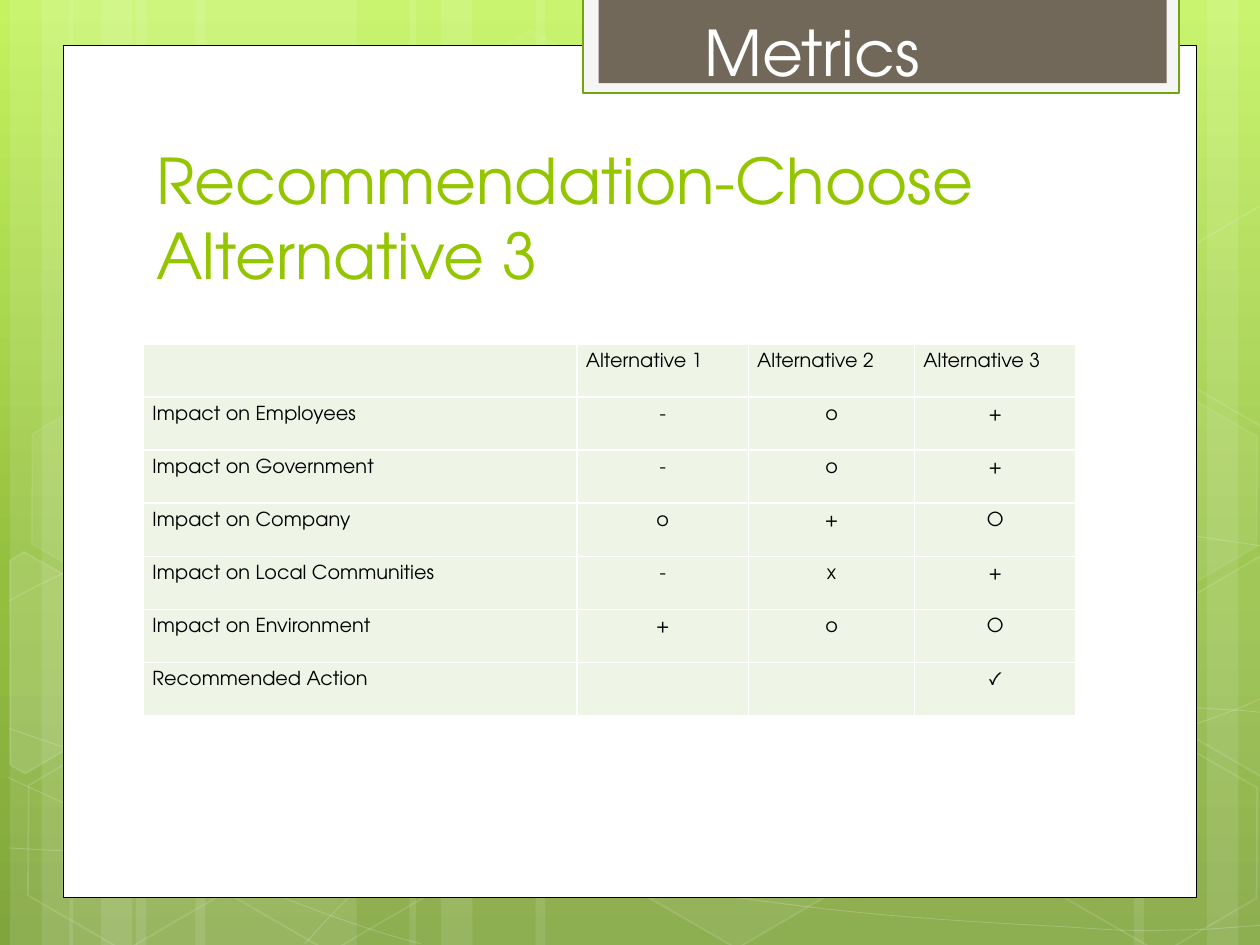
from dataclasses import dataclass

from lxml.etree import SubElement
from pptx import Presentation
from pptx.dml.color import RGBColor
from pptx.enum.shapes import MSO_SHAPE as SHAPE
from pptx.enum.text import MSO_ANCHOR as ANCHOR, MSO_AUTO_SIZE as AUTO_SIZE, PP_ALIGN as ALIGN
from pptx.oxml.ns import qn
from pptx.util import Inches, Pt


@dataclass(frozen=True)
class Theme:
    """Colours, font and type sizes of the slide."""
    font: str = "TeX Gyre Adventor"
    white: str = "FFFFFF"
    black: str = "000000"
    green: str = "94C600"
    tab_edge: str = "74A510"
    tab_frame: str = "F5F5F5"
    tab: str = "71685A"
    cell: str = "EEF5E7"
    sky: tuple = ((0, "C3F35F"), (62, "93BF3F"), (100, "81A53E"))
    title: int = 36
    body: int = 11


T = Theme()

BARS = [(1.08, 1.75), (0.08, 0.5), (0.33, 0.83), (1.55, 1.75), (0.55, 0.5), (0.8, 0.83),
        (7.33, 1.75), (9.58, 0.5), (9, 0.83), (4.25, 3.08), (3.25, 0.5), (3.5, 0.83)]

CURVES = [
    [(0.07, 6.73), (0.61, 6.76), (1.15, 6.79), (1.9, 6.78), (2.65, 6.77), (3.58, 6.75), (4.58, 6.65),
     (5.58, 6.55), (7, 6.36), (7.92, 6.17), (8.83, 5.98), (9.77, 5.68), (10.07, 5.51)],
    [(0.07, 4.77), (0.36, 4.61), (0.65, 4.46), (1.21, 4.31), (1.78, 4.16), (2.59, 3.94), (3.47, 3.87),
     (4.36, 3.8), (5.44, 3.79), (6.54, 3.87), (7.64, 3.95), (9.47, 4.26), (10.07, 4.34)],
    [(0.06, 6.17), (1.27, 6.72), (2.47, 7.27), (3.34, 7.49)],
    [(0.07, 5.78), (0.38, 5.89), (0.7, 6), (1.28, 6.16), (1.86, 6.31), (2.73, 6.56), (3.57, 6.73),
     (4.4, 6.9), (5.45, 7.08), (6.28, 7.18), (7.11, 7.29), (8, 7.33), (8.53, 7.36),
     (9.05, 7.4), (9.19, 7.38), (9.45, 7.38), (9.71, 7.37), (9.89, 7.35), (10.07, 7.34)],
    [(2.42, 7.49), (2.6, 7.29), (2.78, 7.09), (3.02, 6.91), (3.26, 6.73), (3.6, 6.53), (3.88, 6.39),
     (4.16, 6.25), (4.33, 6.19), (4.7, 6.09), (5.06, 5.99), (5.73, 5.85), (6.08, 5.78),
     (6.44, 5.71), (6.49, 5.71), (6.8, 5.69), (7.11, 5.66), (7.6, 5.63), (7.94, 5.62),
     (8.29, 5.61), (8.86, 5.62), (8.86, 5.62), (9.08, 5.62), (9.31, 5.62), (9.53, 5.62),
     (9.71, 5.63), (9.88, 5.64), (9.97, 5.65), (10.06, 5.66), (10.03, 5.65), (10.06, 5.66)],
]

HEXAGONS = [(3.34, 0.36, 4, 8), (4.97, 5.89, 6, 12), (0.11, 5.91, None, 12), (0.14, 3.12, 7, 8),
            (1.74, 5.92, None, 12), (7.53, 4.53, 10, 12), (8.34, 5.93, None, 12), (8.34, 3.14, 7, 8)]

CUT_HEXAGONS = [
    ([(0.08, 4.45), (0.19, 4.38), (0.96, 4.82), (0.95, 5.7), (0.2, 6.14), (0.08, 6.07)], 10),
    ([(9.26, 4.85), (10.01, 4.41), (10.09, 4.46), (10.09, 6.13), (10.02, 6.17), (9.26, 5.73)], 4),
    ([(9.26, 2.07), (10.01, 1.63), (10.1, 1.68), (10.09, 3.35), (10.02, 3.39), (9.26, 2.95)], None),
]

COLUMNS = [3.44, 1.36, 1.32, 1.28]
ROWS = [
    ["", "Alternative 1", "Alternative 2", "Alternative 3"],
    ["Impact on Employees", "-", "o", "+"],
    ["Impact on Government", "-", "o", "+"],
    ["Impact on Company", "o", "+", "O"],
    ["Impact on Local Communities", "-", "x", "+"],
    ["Impact on Environment", "+", "o", "O"],
    ["Recommended Action", "", "", "✓"],
]


def paint(fill, color, alpha=100):
    """Fill solidly, with opacity in percent."""
    fill.solid()
    fill.fore_color.rgb = RGBColor.from_string(color)
    if alpha < 100:
        clr = fill._xPr.find(".//" + qn("a:srgbClr"))
        SubElement(clr, qn("a:alpha"), val=str(alpha * 1000))


def style(sp, fill=None, alpha=100, line=None, width=1, line_alpha=100):
    """Set a shape's fill and outline and drop its shadow."""
    sp.shadow.inherit = False
    if fill and alpha:
        paint(sp.fill, fill, alpha)
    else:
        sp.fill.background()
    if line:
        sp.line.width = Pt(width)
        paint(sp.line.fill, line, line_alpha)
    else:
        sp.line.fill.background()


def add_box(s, x, y, w, h, kind=SHAPE.RECTANGLE, **look):
    """Add a styled preset shape."""
    sp = s.shapes.add_shape(kind, Inches(x), Inches(y), Inches(w), Inches(h))
    style(sp, **look)
    return sp


def add_outline(s, points, close, **look):
    """Add a styled freeform through points in inches."""
    start, *rest = [(Inches(x), Inches(y)) for x, y in points]
    fb = s.shapes.build_freeform(*start)
    fb.add_line_segments(rest, close=close)
    sp = fb.convert_to_shape()
    style(sp, **look)
    return sp


def add_curve(s, points):
    """Add a faint line of cubic Bezier segments."""
    sp = add_outline(s, points, False, line=T.white, width=0.5, line_alpha=20)
    outline = sp._element.find(".//" + qn("a:path"))
    for i, segment in enumerate(outline.findall(qn("a:lnTo"))):
        if i % 3 == 0:
            cubic = SubElement(outline, qn("a:cubicBezTo"))
        cubic.append(segment[0])
        outline.remove(segment)


def add_run(p, text, size, color):
    """Add a run in the theme font."""
    r = p.add_run()
    r.text = text
    r.font.name = T.font
    r.font.size = Pt(size)
    r.font.color.rgb = RGBColor.from_string(color)


def set_background(s):
    """Give the slide its vertical gradient."""
    fill = s.background.fill
    fill.gradient()
    fill.gradient_angle = 270
    stops = s._element.find(".//" + qn("a:gsLst"))
    for gs in list(stops):
        stops.remove(gs)
    for pos, color in T.sky:
        gs = SubElement(stops, qn("a:gs"), pos=str(pos * 1000))
        SubElement(gs, qn("a:srgbClr"), val=color)


def add_backdrop(s):
    """Add the bars, curves and hexagons behind the content."""
    for x, w in BARS:
        add_box(s, x, 0, w, 7.5, fill=T.white, alpha=10)
    for points in CURVES:
        add_curve(s, points)
    for x, y, alpha, line_alpha in HEXAGONS:
        sp = add_box(s, x, y, 1.75, 1.52, SHAPE.HEXAGON, fill=T.white, alpha=alpha,
                     line=T.white, line_alpha=line_alpha)
        sp.adjustments[0] = 0.285
        sp.rotation = 30
    for points, alpha in CUT_HEXAGONS:
        add_outline(s, points, True, fill=T.white, alpha=alpha, line=T.white, line_alpha=12)


def add_panel(s):
    """Add the white page and the tab at its top."""
    add_box(s, 0.5, 0.36, 9, 6.76, fill=T.white, line=T.black, width=0.5)
    add_box(s, 4.63, -0.02, 4.73, 0.76, fill=T.tab_frame, line=T.tab_edge, width=1.25)
    add_box(s, 4.75, -0.02, 4.51, 0.68, fill=T.tab)


def set_title(s, text):
    """Place the title above the backdrop."""
    sp = s.shapes.title
    s.shapes._spTree.append(sp._element)
    sp.left, sp.top, sp.width, sp.height = (Inches(v) for v in (1.14, 1.12, 7.68, 1.25))
    tf = sp.text_frame
    tf.word_wrap, tf.auto_size, tf.vertical_anchor = True, AUTO_SIZE.NONE, ANCHOR.BOTTOM
    p = tf.paragraphs[0]
    p.alignment = ALIGN.LEFT
    add_run(p, text, T.title, T.green)


def add_label(s, text):
    """Add the text on the tab."""
    tf = s.shapes.add_textbox(Inches(5.49), Inches(0.06), Inches(1.94), Inches(0.71)).text_frame
    tf.word_wrap, tf.auto_size = False, AUTO_SIZE.SHAPE_TO_FIT_TEXT
    add_run(tf.paragraphs[0], text, T.title, T.white)


def set_cell(cell, text, align):
    """Fill, border and write one table cell."""
    cell.margin_left = cell.margin_right = Inches(0.07)
    cell.margin_top = cell.margin_bottom = 0
    pr = cell._tc.get_or_add_tcPr()
    for side in ("lnL", "lnR", "lnT", "lnB"):
        fill = SubElement(SubElement(pr, qn("a:" + side), w=str(Pt(1))), qn("a:solidFill"))
        SubElement(fill, qn("a:srgbClr"), val=T.white)
    paint(cell.fill, T.cell)
    if text:
        p = cell.text_frame.paragraphs[0]
        p.alignment, p.line_spacing, p.space_after = align, 1.5, Pt(5)
        add_run(p, text, T.body, T.black)


def add_metrics_table(s):
    """Add the table comparing the alternatives."""
    table = s.shapes.add_table(len(ROWS), len(COLUMNS), Inches(1.14), Inches(2.73),
                               Inches(sum(COLUMNS)), Inches(2.95)).table
    table.first_row = table.horz_banding = False
    for col, w in zip(table.columns, COLUMNS):
        col.width = Inches(w)
    for i, row in enumerate(ROWS):
        for j, text in enumerate(row):
            set_cell(table.cell(i, j), text, ALIGN.CENTER if i and j else ALIGN.LEFT)


def main():
    """Build and save the slide."""
    prs = Presentation()
    prs.slide_width, prs.slide_height = Inches(10), Inches(7.5)
    s = prs.slides.add_slide(prs.slide_layouts[5])
    set_background(s)
    add_backdrop(s)
    add_panel(s)
    set_title(s, "Recommendation-Choose Alternative 3")
    add_metrics_table(s)
    add_label(s, "Metrics")
    prs.save("out.pptx")


if __name__ == "__main__":
    main()
